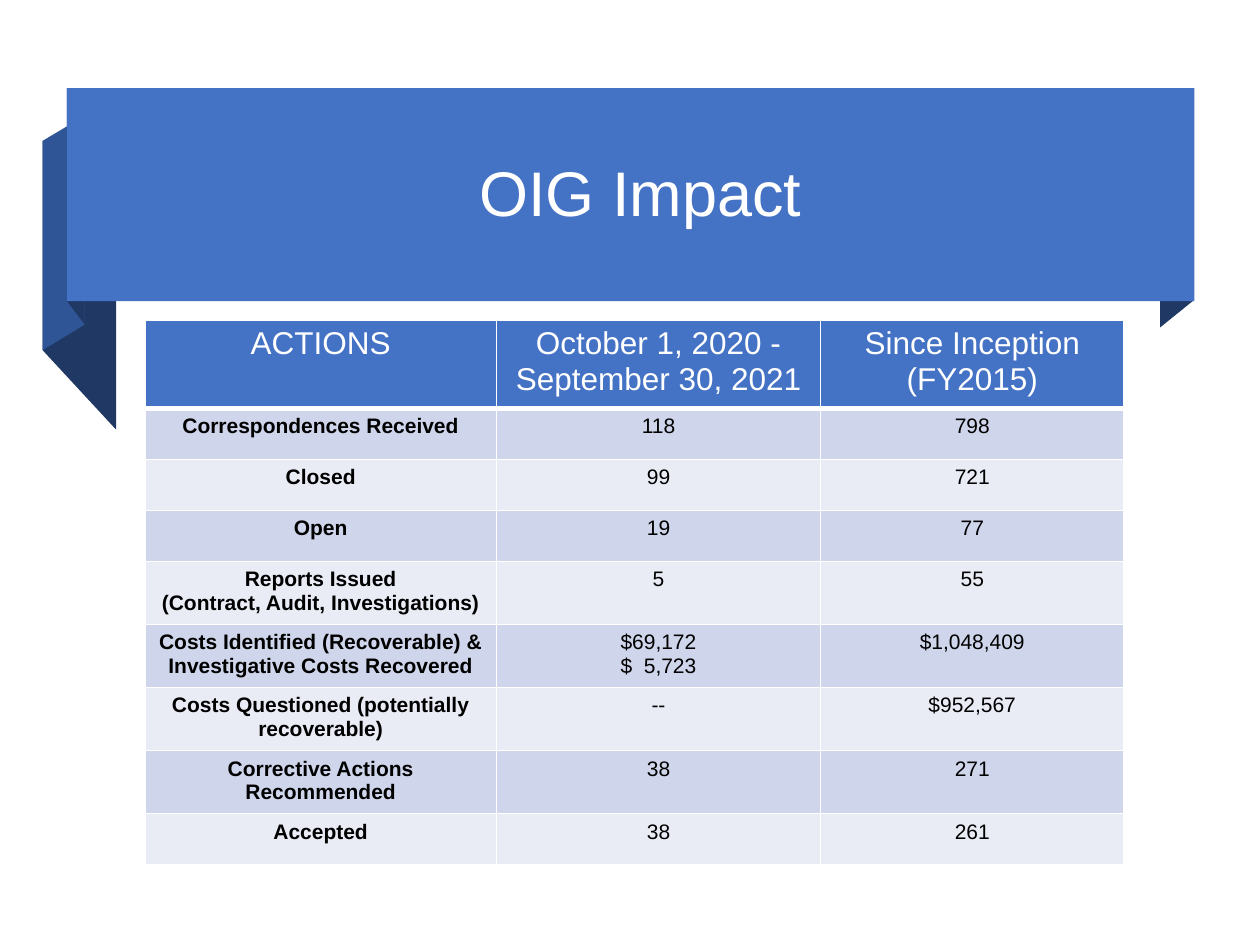
import pptx
import pptx.util
import pptx.dml.color
import pptx.enum.shapes
import pptx.enum.text
import pptx.oxml
import pptx.oxml.ns

Cm = pptx.util.Cm
Pt = pptx.util.Pt

COLOURS = {
    "banner": "4472C4",
    "fold": "2F5597",
    "shade": "203864",
    "band_dark": "CFD5EA",
    "band_light": "E9EBF5",
    "white": "FFFFFF",
    "black": "000000",
}
FONT = "Arial"


class ImpactSlide:
    """Holds the style and the slide being drawn; lengths are in cm."""

    def __init__(self, slide):
        self.slide = slide
        self.ribbon = slide.shapes.add_group_shape()

    def rgb(self, colour):
        return pptx.dml.color.RGBColor.from_string(COLOURS[colour])

    def paint(self, shape, colour):
        shape.shadow.inherit = False
        shape.fill.solid()
        shape.fill.fore_color.rgb = self.rgb(colour)
        shape.line.fill.background()

    def fold(self, colour, points):
        corners = [(Cm(x), Cm(y)) for x, y in points]
        outline = self.ribbon.shapes.build_freeform(*corners[0])
        outline.add_line_segments(corners[1:], close=True)
        self.paint(outline.convert_to_shape(), colour)

    def banner(self, left, top, width, height):
        front = self.ribbon.shapes.add_shape(
            pptx.enum.shapes.MSO_SHAPE.RECTANGLE,
            Cm(left), Cm(top), Cm(width), Cm(height))
        self.paint(front, "banner")

    def add_lines(self, frame, text, size, colour, bold=False, spacing=None):
        for index, line in enumerate(text.split("\n")):
            paragraph = frame.add_paragraph() if index else frame.paragraphs[0]
            paragraph.alignment = pptx.enum.text.PP_ALIGN.CENTER
            if spacing:
                paragraph.line_spacing = spacing
            run = paragraph.add_run()
            run.text = line
            run.font.name = FONT
            run.font.size = Pt(size)
            run.font.bold = bold
            run.font.color.rgb = self.rgb(colour)

    def title(self, text, left, top, width, height):
        heading = self.slide.shapes.add_textbox(
            Cm(left), Cm(top), Cm(width), Cm(height)).text_frame
        heading.word_wrap = True
        heading.vertical_anchor = pptx.enum.text.MSO_ANCHOR.MIDDLE
        self.add_lines(heading, text, 36, "white", spacing=0.9)

    def borders(self, cell, bottom):
        properties = cell._tc.get_or_add_tcPr()
        widths = {"lnL": 1, "lnR": 1, "lnT": 1, "lnB": bottom}
        for index, (side, width) in enumerate(widths.items()):
            properties.insert(index, pptx.oxml.parse_xml(
                f'<a:{side} {pptx.oxml.ns.nsdecls("a")} w="{Pt(width)}">'
                f'<a:solidFill><a:srgbClr val="{COLOURS["white"]}"/></a:solidFill>'
                f'</a:{side}>'))

    def table(self, rows, left, top, column_widths, header_height, row_height):
        heights = [header_height] + [row_height] * (len(rows) - 1)
        actions = self.slide.shapes.add_table(
            len(rows), len(column_widths), Cm(left), Cm(top),
            Cm(sum(column_widths)), Cm(sum(heights))).table
        for column, width in zip(actions.columns, column_widths):
            column.width = Cm(width)
        for r, (values, height) in enumerate(zip(rows, heights)):
            actions.rows[r].height = Cm(height)
            header = r == 0
            fill = "banner" if header else "band_dark" if r % 2 else "band_light"
            for c, text in enumerate(values):
                cell = actions.cell(r, c)
                cell.fill.solid()
                cell.fill.fore_color.rgb = self.rgb(fill)
                self.borders(cell, 3 if header else 1)
                self.add_lines(cell.text_frame, text,
                               18 if header else 12,
                               "white" if header else "black",
                               bold=c == 0 and not header)


ACTIONS = [
    ("ACTIONS", "October 1, 2020 - September 30, 2021", "Since Inception (FY2015)"),
    ("Correspondences Received", "118", "798"),
    ("Closed", "99", "721"),
    ("Open", "19", "77"),
    ("Reports Issued\n(Contract, Audit, Investigations)", "5", "55"),
    ("Costs Identified (Recoverable) &\nInvestigative Costs Recovered",
     "$69,172\n$  5,723", "$1,048,409"),
    ("Costs Questioned (potentially recoverable)", "--", "$952,567"),
    ("Corrective Actions Recommended", "38", "271"),
    ("Accepted", "38", "261"),
]


def main():
    deck = pptx.Presentation()
    deck.slide_width, deck.slide_height = Cm(25.4), Cm(19.05)
    impact = ImpactSlide(deck.slides.add_slide(deck.slide_layouts[6]))

    # Ribbon: folds behind, banner in front
    impact.fold("shade", [(24.07, 6.05), (23.39, 6.6), (23.39, 2.31), (24.07, 1.78)])
    impact.fold("shade", [(2.34, 8.66), (0.86, 7.06), (0.86, 2.84), (2.34, 4.45)])
    impact.fold("fold", [(1.7, 6.55), (0.86, 7.06), (0.86, 2.84), (1.7, 2.34)])
    impact.fold("shade", [(1.7, 6.53), (1.35, 6.07), (1.35, 1.78), (1.7, 2.26)])
    impact.banner(1.35, 1.78, 22.73, 4.29)

    # Title on the banner
    impact.title("OIG Impact", 2.18, 2.11, 21.46, 3.68)

    # Table of actions
    impact.table(ACTIONS, 2.92, 6.45, [7.09, 6.53, 6.12], 0.86, 1.03)

    deck.save("out.pptx")


if __name__ == "__main__":
    main()
